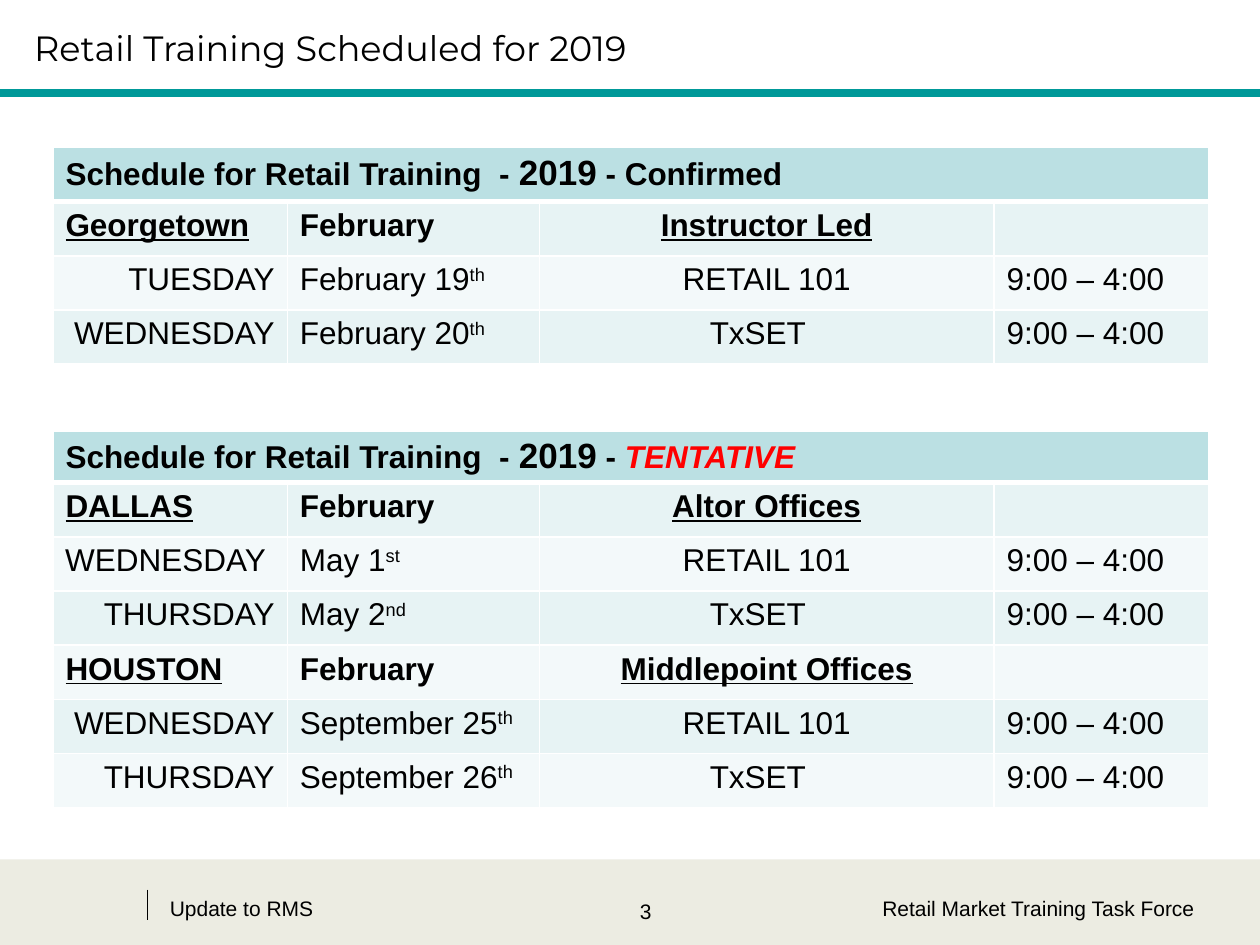
from dataclasses import dataclass

from lxml.etree import SubElement
from pptx import Presentation
from pptx.dml.color import RGBColor
from pptx.enum.shapes import MSO_CONNECTOR, MSO_SHAPE
from pptx.enum.text import MSO_ANCHOR, PP_ALIGN
from pptx.oxml.ns import qn
from pptx.util import Inches, Pt

COLORS = {
    "black": "000000", "white": "FFFFFF", "red": "FF0000", "teal": "009999",
    "footer": "ECECE2", "header": "BBE0E3", "odd": "E7F3F4", "even": "F3F9FA",
}
LEFT, CENTER, RIGHT = PP_ALIGN.LEFT, PP_ALIGN.CENTER, PP_ALIGN.RIGHT
COL_WIDTHS = (1.86, 2, 3.61, 1.7)
ROW_HEIGHT = 0.43
CELL_MARGIN = 0.1
HOURS = "9:00 – 4:00"


@dataclass
class Venue:
    city: str
    month: str
    place: str


@dataclass
class Session:
    day: str
    date: str
    suffix: str
    course: str
    day_inset: float = 0
    course_inset: float = 0


@dataclass
class Schedule:
    top: float
    header_height: float
    status: str
    status_format: dict
    rows: list[Venue | Session]


SCHEDULES = [
    Schedule(1.17, 0.43, "Confirmed", {}, [
        Venue("Georgetown", "February", "Instructor Led"),
        Session("TUESDAY", "February 19", "th", "RETAIL 101"),
        Session("WEDNESDAY", "February 20", "th", "TxSET", course_inset=0.14),
    ]),
    Schedule(3.42, 0.4, "TENTATIVE", {"color": "red", "italic": True}, [
        Venue("DALLAS", "February", "Altor Offices"),
        Session("WEDNESDAY", "May 1", "st", "RETAIL 101", day_inset=0.07),
        Session("THURSDAY", "May 2", "nd", "TxSET", course_inset=0.14),
        Venue("HOUSTON", "February", "Middlepoint Offices"),
        Session("WEDNESDAY", "September 25", "th", "RETAIL 101"),
        Session("THURSDAY", "September 26", "th", "TxSET", course_inset=0.14),
    ]),
]


def rgb(name: str) -> RGBColor:
    return RGBColor.from_string(COLORS[name])


def add_text(p, text: str, *, size=18, font="Arial", color="black", bold=False,
             italic=False, underline=False, superscript=False, align=None) -> None:
    r = p.add_run()
    r.text = text
    f = r.font
    f.size, f.name, f.bold, f.italic, f.underline = Pt(size), font, bold, italic, underline
    f.color.rgb = rgb(color)
    if superscript:
        r._r.get_or_add_rPr().set("baseline", "30000")
    if align is not None:
        p.alignment = align


def add_label(s, text: str, x: float, y: float, w: float, h: float, align) -> None:
    tf = s.shapes.add_textbox(Inches(x), Inches(y), Inches(w), Inches(h)).text_frame
    tf.word_wrap = True
    add_text(tf.paragraphs[0], text, size=12, align=align)


def add_line(s, x1: float, y1: float, x2: float, y2: float, color: str, width: float) -> None:
    line = s.shapes.add_connector(MSO_CONNECTOR.STRAIGHT, Inches(x1), Inches(y1),
                                  Inches(x2), Inches(y2))
    line.line.color.rgb = rgb(color)
    line.line.width = Pt(width)
    SubElement(line._element.spPr, qn("a:effectLst"))


def style_cell(cell, fill: str, top: float, bottom: float) -> None:
    tc_pr = cell._tc.get_or_add_tcPr()
    for side, width in (("L", 1), ("R", 1), ("T", top), ("B", bottom)):
        ln = SubElement(tc_pr, qn(f"a:ln{side}"), w=str(Pt(width)))
        SubElement(SubElement(ln, qn("a:solidFill")), qn("a:srgbClr"), val=COLORS["white"])
    cell.fill.solid()
    cell.fill.fore_color.rgb = rgb(fill)


def fill_row(cells: list, row: Venue | Session) -> None:
    first, second, third, fourth = (c.text_frame.paragraphs[0] for c in cells)
    if isinstance(row, Venue):
        add_text(first, row.city, bold=True, underline=True)
        add_text(second, row.month, bold=True)
        add_text(third, row.place, bold=True, underline=True, align=CENTER)
        return
    add_text(first, row.day, align=RIGHT)
    add_text(second, row.date)
    add_text(second, row.suffix, superscript=True)
    add_text(third, row.course, align=CENTER)
    add_text(fourth, HOURS)
    cells[0].margin_left = Inches(CELL_MARGIN - row.day_inset)
    cells[0].margin_right = Inches(CELL_MARGIN + row.day_inset)
    cells[2].margin_right = Inches(CELL_MARGIN + row.course_inset)


def add_schedule(s, schedule: Schedule) -> None:
    heights = [schedule.header_height] + [ROW_HEIGHT] * len(schedule.rows)
    table = s.shapes.add_table(len(heights), len(COL_WIDTHS), Inches(0.42),
                               Inches(schedule.top), Inches(sum(COL_WIDTHS)),
                               Inches(sum(heights))).table
    table.first_row = table.horz_banding = False
    for column, width in zip(table.columns, COL_WIDTHS):
        column.width = Inches(width)
    for i, (row, height) in enumerate(zip(table.rows, heights)):
        row.height = Inches(height)
        fill = "header" if i == 0 else "odd" if i % 2 else "even"
        for cell in row.cells:
            style_cell(cell, fill, 3 if i == 1 else 1, 3 if i == 0 else 1)
        if i:
            fill_row(list(row.cells), schedule.rows[i - 1])
    header = table.cell(0, 0)
    header.merge(table.cell(0, len(COL_WIDTHS) - 1))
    p = header.text_frame.paragraphs[0]
    add_text(p, "Schedule for Retail Training  - ", bold=True)
    add_text(p, "2019", size=20, bold=True)
    add_text(p, " - ", bold=True)
    add_text(p, schedule.status, bold=True, **schedule.status_format)


def main() -> None:
    prs = Presentation()
    prs.slide_width, prs.slide_height = Inches(10), Inches(7.5)
    s = prs.slides.add_slide(prs.slide_layouts[5])

    footer = s.shapes.add_shape(MSO_SHAPE.RECTANGLE, 0, Inches(6.82), Inches(10), Inches(0.68))
    footer.shadow.inherit = False
    footer.fill.solid()
    footer.fill.fore_color.rgb = rgb("footer")
    footer.line.fill.background()
    add_line(s, 1.17, 7.06, 1.17, 7.3, "black", 0.75)
    add_line(s, 0, 0.74, 10, 0.74, "teal", 4.5)

    title = s.shapes.title
    title.left, title.top = Inches(0.17), Inches(0)
    title.width, title.height = Inches(9.5), Inches(0.75)
    title.text_frame.vertical_anchor = MSO_ANCHOR.MIDDLE
    add_text(title.text_frame.paragraphs[0], "Retail Training Scheduled for 2019",
             size=20, font="Montserrat", align=LEFT)

    for schedule in SCHEDULES:
        add_schedule(s, schedule)

    add_label(s, "Update to RMS", 1.25, 7.06, 2.33, 0.52, LEFT)
    add_label(s, "3", 3.75, 7.08, 2.75, 0.5, CENTER)
    add_label(s, "Retail Market Training Task Force", 6.83, 7.06, 2.75, 0.5, RIGHT)
    prs.save("out.pptx")


if __name__ == "__main__":
    main()
